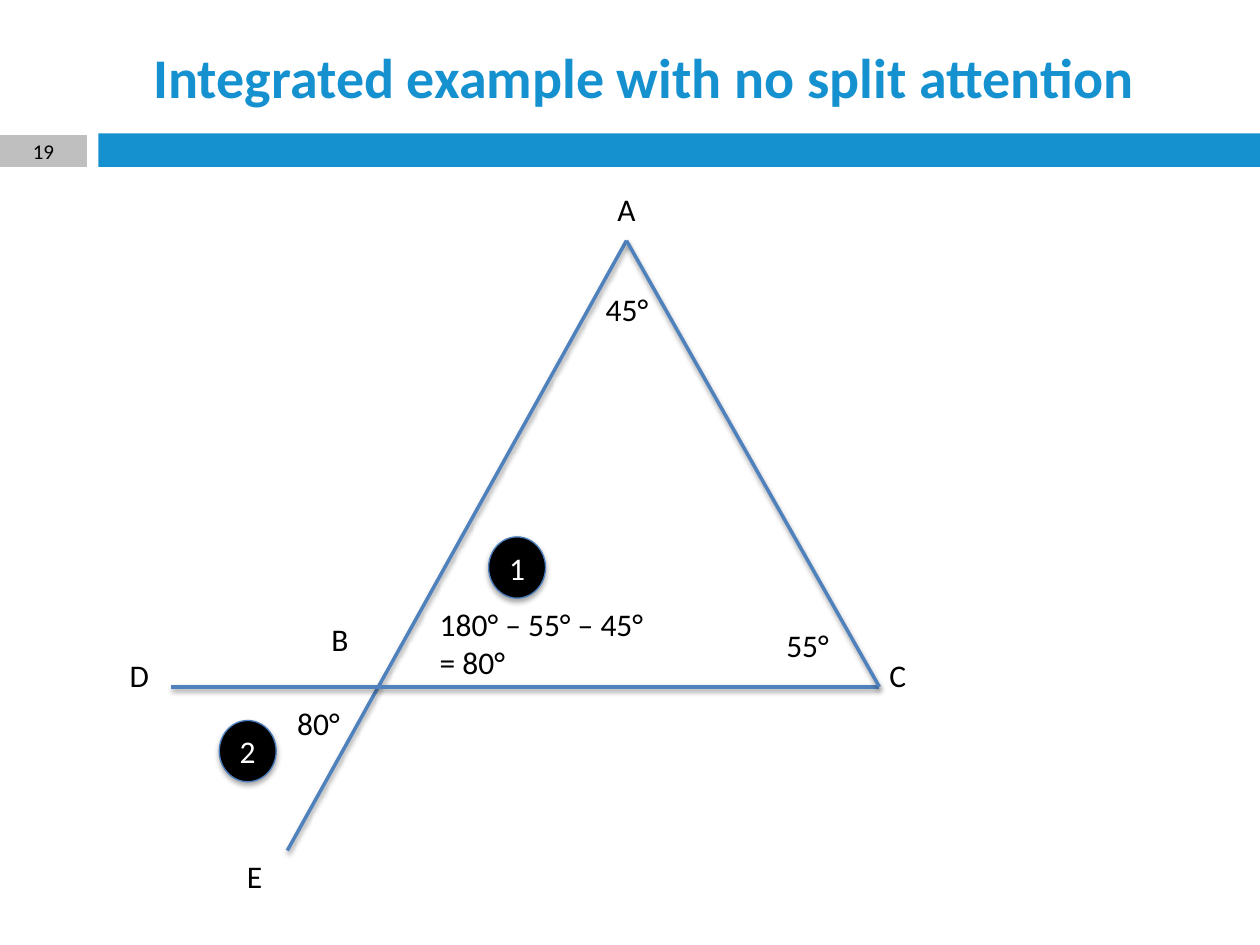
from lxml import etree
from pptx import Presentation
from pptx.dml.color import RGBColor
from pptx.enum import shapes, text
from pptx.oxml import ns
from pptx.util import Pt

FONT = "Calibri"
BLUE, GREY, LINE, RIM = "1691D0", "BFBFBF", "4F81BD", "4B7EBC"
BLACK, WHITE = "000000", "FFFFFF"
LEFT, CENTER = text.PP_ALIGN.LEFT, text.PP_ALIGN.CENTER


def rgb(value):
    """Return the colour for a hex string."""
    return RGBColor.from_string(value)


def write(sp, lines, size=18, color=BLACK, align=LEFT, anchor=text.MSO_ANCHOR.TOP, wrap=True, bold=False):
    """Fill a shape with formatted paragraphs."""
    tf = sp.text_frame
    tf.word_wrap = wrap
    tf.vertical_anchor = anchor
    tf.text = "\n".join(lines)
    for p in tf.paragraphs:
        p.alignment = align
        p.font.name, p.font.size, p.font.bold = FONT, Pt(size), bold
        p.font.color.rgb = rgb(color)


def add_shadow(sp, blur, dist, alpha):
    """Give a shape or connector a soft shadow straight below it."""
    effects = etree.SubElement(sp._element.spPr, ns.qn("a:effectLst"))
    outer = etree.SubElement(effects, ns.qn("a:outerShdw"), blurRad=str(Pt(blur)),
                             dist=str(Pt(dist)), dir="5400000", rotWithShape="0")
    color = etree.SubElement(outer, ns.qn("a:srgbClr"), val=BLACK)
    etree.SubElement(color, ns.qn("a:alpha"), val=str(alpha * 1000))


def add_bar(s, box, color):
    """Add a plain filled rectangle."""
    sp = s.shapes.add_shape(shapes.MSO_SHAPE.RECTANGLE, *map(Pt, box))
    sp.shadow.inherit = False
    sp.fill.solid()
    sp.fill.fore_color.rgb = rgb(color)
    sp.line.fill.background()
    return sp


def add_header(s, box, title, number):
    """Place the title, the coloured bar and the slide number."""
    x, y, w, h = box
    bar_x, bar_y = x + 56.2, y + 76.2
    add_bar(s, (bar_x, bar_y, w - 56.2, 19.2), BLUE)
    badge = add_bar(s, (x, bar_y + 1, 49.7, 18.2), GREY)
    badge.text_frame.margin_top = badge.text_frame.margin_bottom = 0
    write(badge, [number], 12, align=CENTER, anchor=text.MSO_ANCHOR.MIDDLE)
    sp = s.shapes.title
    sp.left, sp.top, sp.width, sp.height = map(Pt, (bar_x, y + 18.7, 623.5, 49))
    write(sp, [title], 32, BLUE, CENTER, text.MSO_ANCHOR.MIDDLE, bold=True)


def add_label(s, box, lines, align=LEFT, wrap=True):
    """Add a text label."""
    sp = s.shapes.add_textbox(*map(Pt, box))
    write(sp, lines, align=align, wrap=wrap)


def add_side(s, start, end):
    """Draw one line of the figure."""
    sp = s.shapes.add_connector(shapes.MSO_CONNECTOR.STRAIGHT, *map(Pt, start + end))
    sp.line.color.rgb = rgb(LINE)
    sp.line.width = Pt(2)
    add_shadow(sp, 3.1, 1.6, 38)


def add_step(s, x, y, number):
    """Add a numbered step marker."""
    sp = s.shapes.add_shape(shapes.MSO_SHAPE.OVAL, Pt(x), Pt(y), Pt(32.5), Pt(35))
    sp.fill.solid()
    sp.fill.fore_color.rgb = rgb(BLACK)
    sp.line.color.rgb = rgb(RIM)
    sp.line.width = Pt(0.75)
    add_shadow(sp, 3.1, 1.8, 35)
    write(sp, [number], color=WHITE, align=CENTER, anchor=text.MSO_ANCHOR.MIDDLE, wrap=False)


def add_figure(s, box):
    """Draw the triangle with its labels, angles and worked steps."""
    x, y, w, h = box
    base = y + 255
    a, c, d, e = (x + 260, y), (x + w, base), (x, base), (x + 66.2, y + h)
    for start, end in ((e, a), (d, c), (c, a)):
        add_side(s, start, end)
    add_label(s, (a[0] - 31, y - 32.4, 62, 31), ["A"], CENTER)
    add_label(s, (a[0] - 46.2, y + 24.5, 92.9, 31), ["45°"], CENTER)
    corners = (("B", x + 84.2, base - 41.8), ("D", x - 31, base - 21),
               ("C", x + 403.2, base - 21), ("E", x + 36, y + h))
    for name, left, top in corners:
        add_label(s, (left, top, 62, 41.8), [name])
    add_label(s, (x + 344.2, base - 38.2, 92.9, 41.8), ["55°"])
    sums = ["180°\u00a0–\u00a055°\u00a0–\u00a045°", "=\u00a080°"]
    add_label(s, (x + 146.2, base - 50.4, 131.8, 51), sums, wrap=False)
    add_step(s, x + 181.2, base - 85.7, "1")
    add_step(s, x + 27.3, base + 19.2, "2")
    add_label(s, (x + 64.8, base + 6.5, 38.9, 28.8), ["80°"], wrap=False)


def main():
    """Build and save the slide."""
    prs = Presentation()
    prs.slide_width, prs.slide_height = Pt(720), Pt(540)
    s = prs.slides.add_slide(prs.slide_layouts[5])
    add_header(s, (0, 0, 720, 96), "Integrated example with no split attention", "19")
    add_figure(s, (98, 137.5, 404.5, 348.5))
    prs.save("out.pptx")


if __name__ == "__main__":
    main()
